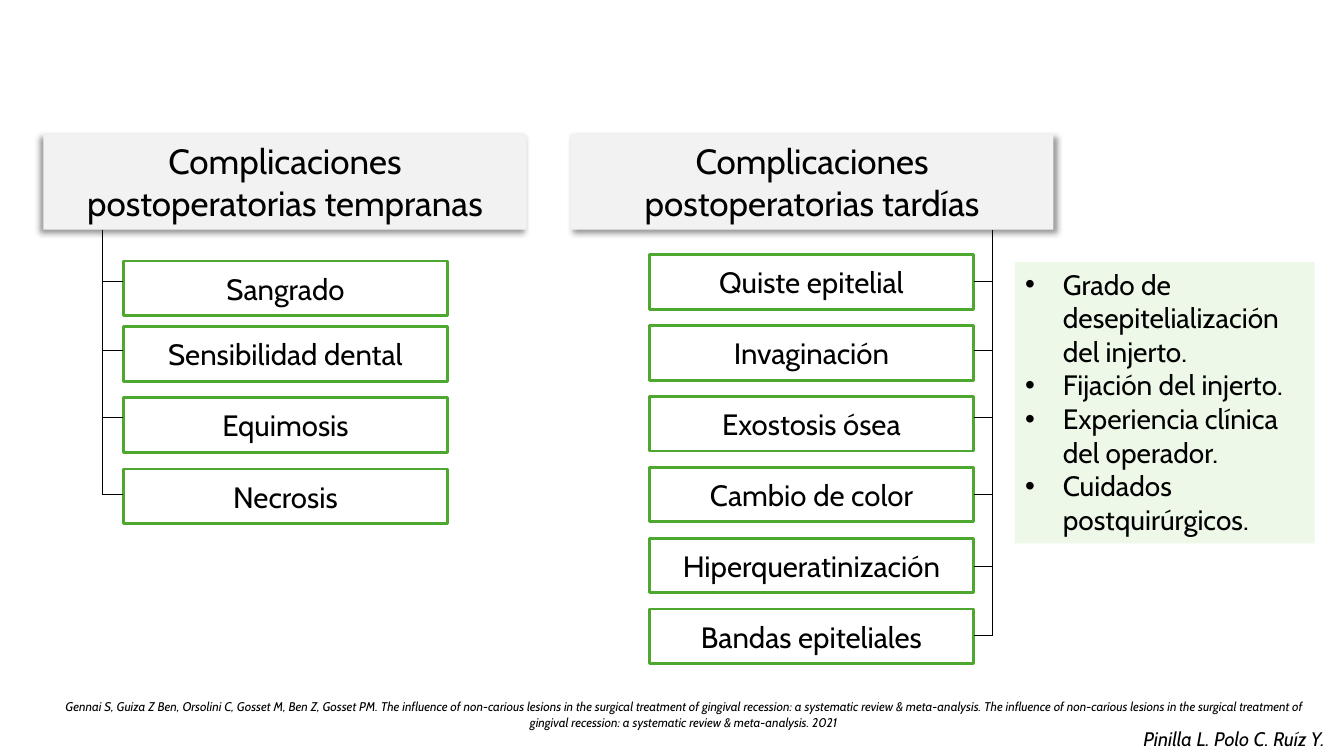
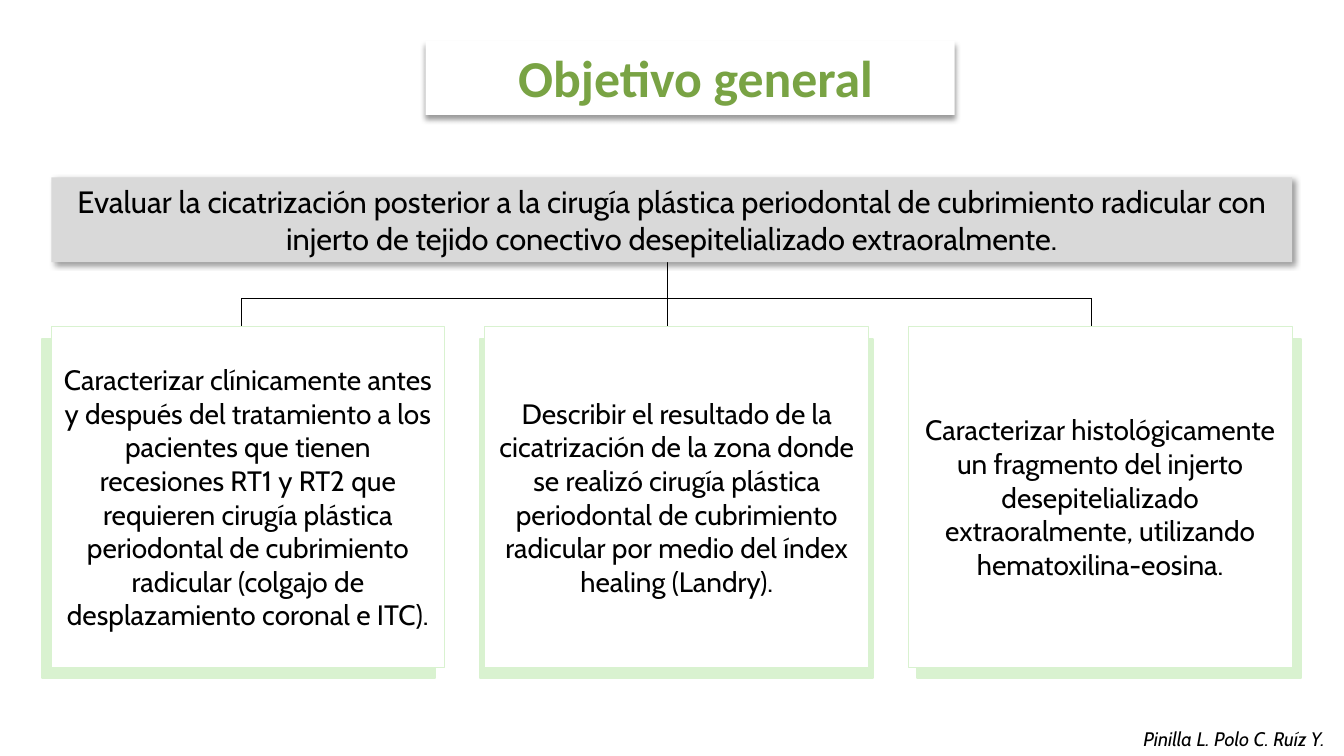
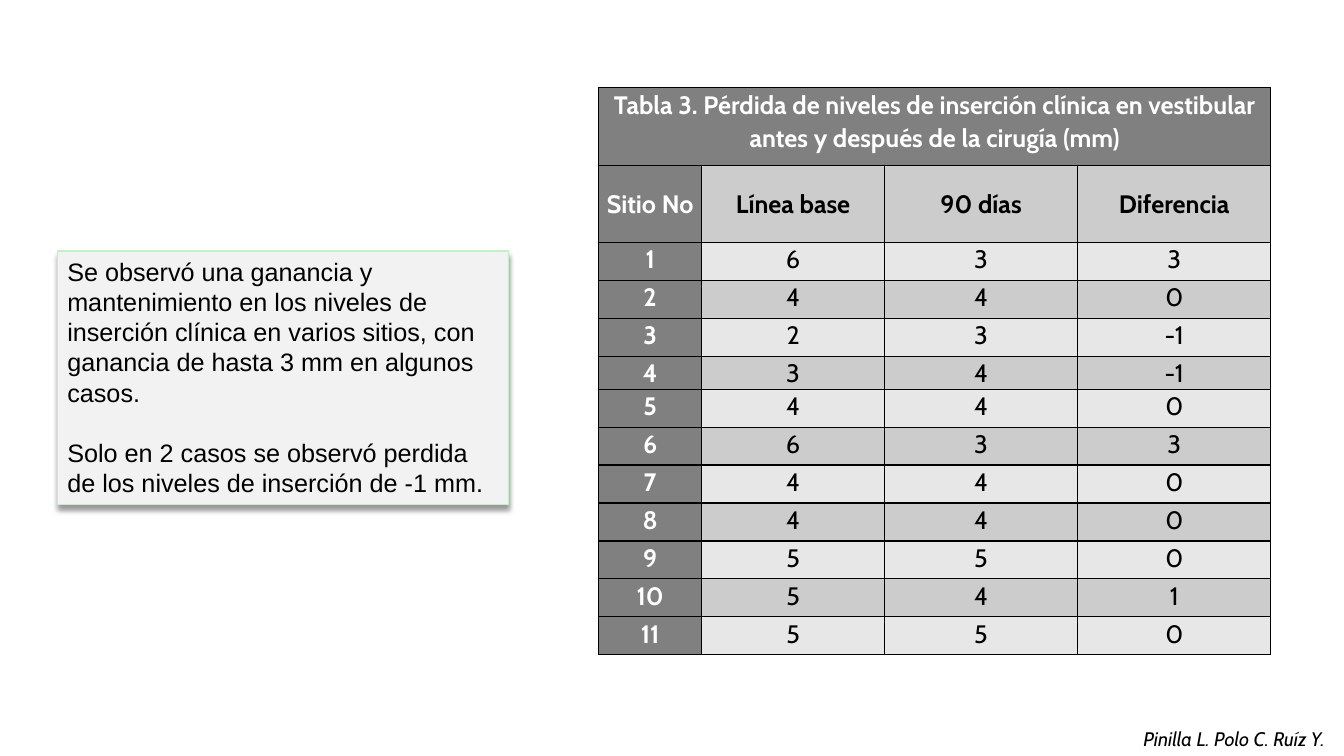
from lxml.etree import SubElement
from pptx import Presentation
from pptx.dml.color import RGBColor
from pptx.enum.shapes import MSO_CONNECTOR, MSO_SHAPE
from pptx.enum.text import MSO_ANCHOR, MSO_AUTO_SIZE, PP_ALIGN
from pptx.oxml.ns import qn
from pptx.util import Pt

BLACK, WHITE = "000000", "FFFFFF"
GREEN, PALE_GREEN = "4EA72E", "D9F2D0"
GRAY = "F2F2F2"
FONT = "Cabin"
hex_color = RGBColor.from_string


def add_box(s, x, y, w, h, text="", size=20, fill=None, line=None, line_width=0.75,
            shadow=None, font=FONT, color=BLACK, bold=False, italic=False,
            align=PP_ALIGN.CENTER, anchor=MSO_ANCHOR.TOP, sp=None):
    bounds = Pt(x), Pt(y), Pt(w), Pt(h)
    if sp is not None:
        sp.left, sp.top, sp.width, sp.height = bounds
    elif fill:
        sp = s.shapes.add_shape(MSO_SHAPE.RECTANGLE, *bounds)
    else:
        sp = s.shapes.add_textbox(*bounds)
    if fill:
        sp.fill.solid()
        sp.fill.fore_color.rgb = hex_color(fill)
        if line:
            sp.line.color.rgb = hex_color(line)
            sp.line.width = Pt(line_width)
        else:
            sp.line.fill.background()
        sp.shadow.inherit = False
    if shadow is not None:
        effects = sp._element.spPr.find(qn("a:effectLst"))
        outer = SubElement(effects, qn("a:outerShdw"), blurRad=str(Pt(4)), dist=str(Pt(3)),
                           dir=str(shadow * 60000), algn="ctr", rotWithShape="0")
        tint = SubElement(outer, qn("a:srgbClr"), val=BLACK)
        SubElement(tint, qn("a:alpha"), val="40000")
    tf = sp.text_frame
    tf.word_wrap = True
    tf.auto_size = MSO_AUTO_SIZE.NONE
    tf.vertical_anchor = anchor
    tf.text = text
    for p in tf.paragraphs:
        p.alignment = align
        p.space_before = Pt(0)
        for r in p.runs:
            r.font.name, r.font.size = font, Pt(size)
            r.font.bold, r.font.italic = bold, italic
            r.font.color.rgb = hex_color(color)
    return sp


def add_line(s, x1, y1, x2, y2):
    ln = s.shapes.add_connector(MSO_CONNECTOR.STRAIGHT, Pt(x1), Pt(y1), Pt(x2), Pt(y2))
    ln.line.color.rgb = hex_color(BLACK)
    ln.line.width = Pt(0.75)
    SubElement(ln._element.spPr, qn("a:effectLst"))


prs = Presentation()
prs.slide_width, prs.slide_height = Pt(960), Pt(540)
slides = [prs.slides.add_slide(prs.slide_layouts[i]) for i in (1, 5, 6)]
for s in slides:
    add_box(s, 803.5, 515.5, 156, 24.5, "Pinilla L. Polo C. Ruíz Y.", 14, italic=True)

s = slides[0]
title = s.shapes.title._element
title.getparent().remove(title)
ticks = [201.3, 250.2, 298.5, 353.2, 404.6, 453.9]
columns = [
    (31, "Complicaciones postoperatorias tempranas", 135, 73, 88, 88,
     ["Sangrado", "Sensibilidad dental", "Equimosis", "Necrosis"],
     [186.5, 233.5, 284, 335]),
    (407.5, "Complicaciones postoperatorias tardías", 45, 709.2, 463.7, 695.5,
     ["Quiste epitelial", "Invaginación", "Exostosis ósea", "Cambio de color",
      "Hiperqueratinización", "Bandas epiteliales"],
     [182 + 50.6 * i for i in range(6)]),
]
for x, heading, angle, spine, left, edge, items, tops in columns:
    add_box(s, x, 96, 345, 68, heading, 25, GRAY, shadow=angle)
    for item, top, tick in zip(items, tops, ticks):
        add_box(s, left, top, 231.8, 39, item, 21, WHITE, GREEN, 2, anchor=MSO_ANCHOR.MIDDLE)
        add_line(s, spine, tick, edge, tick)
    add_line(s, spine, 164, spine, ticks[len(items) - 1])

factors = "\n".join([
    "Grado de desepitelialización del injerto.",
    "Fijación del injerto.",
    "Experiencia clínica del operador.",
    "Cuidados postquirúrgicos.",
])
sp = add_box(s, 725, 187.2, 214, 201, factors, 20, PALE_GREEN,
             align=PP_ALIGN.LEFT, sp=s.placeholders[1])
tint = sp._element.spPr.find(qn("a:solidFill")).find(qn("a:srgbClr"))
SubElement(tint, qn("a:alpha"), val="47000")
add_box(s, 31, 496, 914.4, 30.2,
        "Gennai S, Guiza Z Ben, Orsolini C, Gosset M, Ben Z, Gosset PM. The influence of "
        "non-carious lesions in the surgical treatment of gingival recession: a systematic "
        "review & meta-analysis. The influence of non-carious lesions in the surgical "
        "treatment of gingival recession: a systematic review & meta-analysis. 2021",
        9, italic=True)

s = slides[1]
sp = add_box(s, 304, 29, 378, 53, "Objetivo general", 37, WHITE, shadow=90,
             font="Calibri", color="79A344", bold=True, sp=s.shapes.title)
sp.text_frame.margin_left = Pt(15)
add_line(s, 172.8, 213, 779.8, 213)
add_line(s, 476.6, 187, 476.6, 213)
objectives = [
    (30.2, 280.8, 36.7, 280.8, 172.8,
     "Caracterizar clínicamente antes y después del tratamiento a los pacientes que tienen "
     "recesiones RT1 y RT2 que requieren cirugía plástica periodontal de cubrimiento "
     "radicular (colgajo de desplazamiento coronal e ITC)."),
    (342.7, 280.8, 346.3, 274.3, 476.6,
     "Describir el resultado de la cicatrización de la zona donde se realizó cirugía "
     "plástica periodontal de cubrimiento radicular por medio del índex healing (Landry)."),
    (655.2, 274.3, 648.7, 274.3, 779.8,
     "Caracterizar histológicamente un fragmento del injerto desepitelializado "
     "extraoralmente, utilizando hematoxilina-eosina."),
]
for back_x, back_w, x, w, drop, text in objectives:
    add_box(s, back_x, 242, back_w, 242.6, fill=PALE_GREEN, line=PALE_GREEN, line_width=1.5)
    add_line(s, drop, 213, drop, 233.3)
    add_box(s, x, 233.3, w, 243.4, text, 20, WHITE, PALE_GREEN, anchor=MSO_ANCHOR.MIDDLE)
add_box(s, 36.7, 126.7, 886.3, 60.5,
        "Evaluar la cicatrización posterior a la cirugía plástica periodontal de cubrimiento "
        "radicular con injerto de tejido conectivo desepitelializado extraoralmente.",
        22, "D9D9D9", shadow=45)

s = slides[2]
rows = [
    ["Tabla 3. Pérdida de niveles de inserción clínica en vestibular "
     "antes y después de la cirugía (mm)", "", "", ""],
    ["Sitio No", "Línea base", "90 días", "Diferencia"],
]
levels = [(6, 3, 3), (4, 4, 0), (2, 3, -1), (3, 4, -1), (4, 4, 0), (6, 3, 3),
          (4, 4, 0), (4, 4, 0), (5, 5, 0), (5, 4, 1), (5, 5, 0)]
rows += [[site, *values] for site, values in enumerate(levels, 1)]
heights = [55.2] * 2 + [27.1] * 11
heights[5] = 23
widths = [73.8, 130.5, 138, 138]
table = s.shapes.add_table(len(rows), len(widths), Pt(427.5), Pt(62.8),
                           Pt(sum(widths)), Pt(sum(heights))).table
table.first_row = table.horz_banding = False
for col, width in zip(table.columns, widths):
    col.width = Pt(width)
for i, (row, height) in enumerate(zip(rows, heights)):
    table.rows[i].height = Pt(height)
    for j, value in enumerate(row):
        cell = table.cell(i, j)
        dark = i == 0 or j == 0
        cell.margin_left = cell.margin_right = Pt(5)
        cell.margin_top = cell.margin_bottom = Pt(0)
        cell.vertical_anchor = MSO_ANCHOR.MIDDLE if i == 1 else MSO_ANCHOR.TOP
        for side in ("a:lnL", "a:lnR", "a:lnT", "a:lnB"):
            border = SubElement(cell._tc.get_or_add_tcPr(), qn(side), w=str(Pt(1)))
            SubElement(SubElement(border, qn("a:solidFill")), qn("a:srgbClr"), val=BLACK)
        cell.fill.solid()
        cell.fill.fore_color.rgb = hex_color("808080" if dark else "CCCCCC" if i % 2 else "E7E7E7")
        p = cell.text_frame.paragraphs[0]
        p.text = str(value)
        p.alignment = PP_ALIGN.CENTER
        p.line_spacing = 1.07
        p.font.size = Pt(18)
        for r in p.runs:
            r.font.name, r.font.size, r.font.bold = FONT, Pt(18), dark or i == 1
            r.font.color.rgb = hex_color(WHITE if dark else BLACK)
table.cell(0, 0).merge(table.cell(0, 3))

sp = add_box(s, 41, 179.3, 322, 181.4,
             "Se observó una ganancia y mantenimiento en los niveles de inserción clínica en "
             "varios sitios, con ganancia de hasta 3 mm en algunos casos.\n"
             "Solo en 2 casos se observó perdida de los niveles de inserción de -1 mm.",
             18, GRAY, "C2F1C8", shadow=90, font="Arial", align=PP_ALIGN.LEFT)
sp.text_frame.paragraphs[1].space_before = Pt(21.6)

prs.save("out.pptx")
